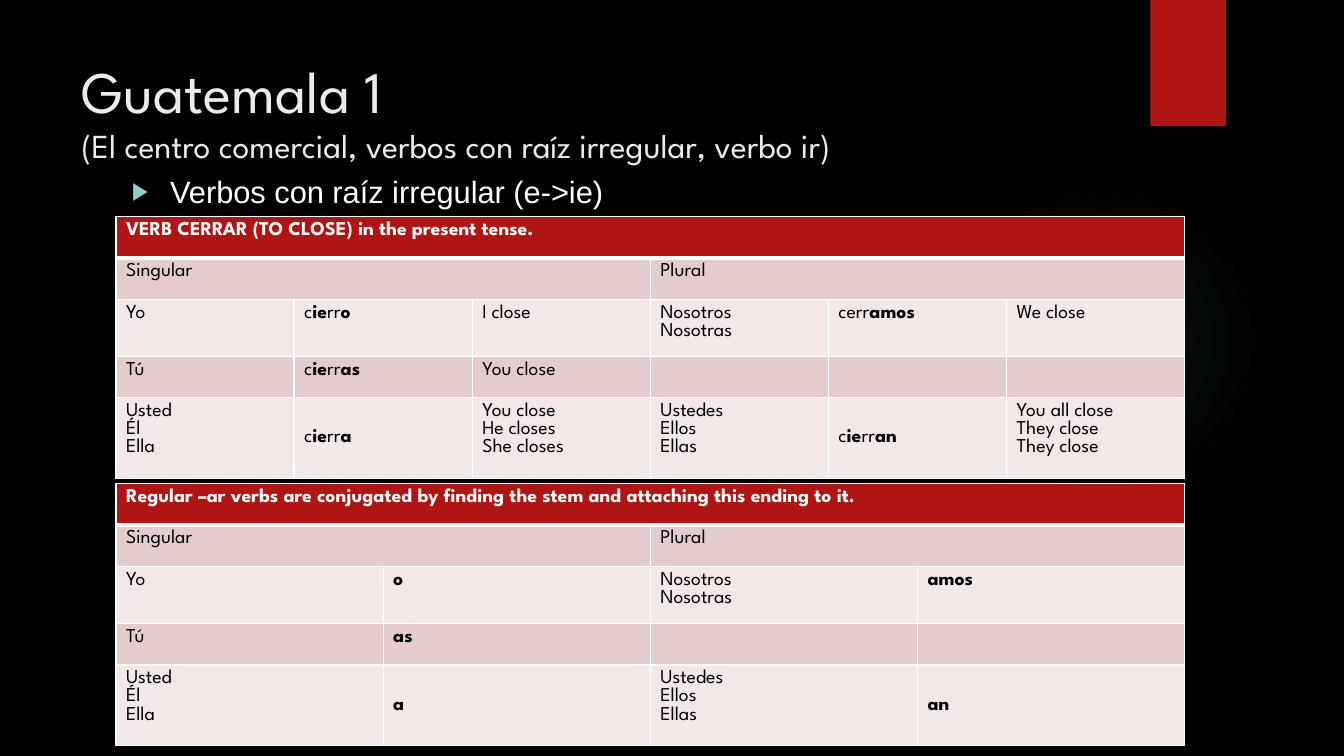
from dataclasses import dataclass

from lxml.etree import SubElement
from pptx import Presentation
from pptx.dml.color import RGBColor
from pptx.enum.shapes import MSO_SHAPE as Preset
from pptx.enum.text import MSO_ANCHOR as Anchor
from pptx.oxml import parse_xml
from pptx.oxml.ns import nsdecls, qn
from pptx.util import Inches, Pt


@dataclass(frozen=True)
class Theme:
    """Colours, fonts and type sizes of the slide."""
    background: str = "000000"
    accent: str = "B01513"
    glow: str = "50B9C1"
    title: str = "EBEBEB"
    white: str = "FFFFFF"
    ink: str = "000000"
    bullet: str = "8AD0D6"
    bands: tuple = ("E4CCCC", "F2E8E7")
    display_font: str = "League Spartan"
    body_font: str = "Arial"
    title_size: int = 42
    subtitle_size: int = 24
    topic_size: int = 22
    cell_size: int = 14


THEME = Theme()
ROW_HEIGHTS = (0.41, 0.41, 0.46, 0.41, 0.63)
CERRAR = [
    ["VERB CERRAR (TO CLOSE) in the present tense."],
    ["Singular", "Plural"],
    ["Yo", "c*ie*rr*o*", "I close", "Nosotros\nNosotras", "cerr*amos*", "We close"],
    ["Tú", "c*ie*rr*as*", "You close", "", "", ""],
    ["Usted\nÉl\nElla", "c*ie*rr*a*", "You close\nHe closes\nShe closes",
     "Ustedes\nEllos\nEllas", "c*ie*rr*an*", "You all close\nThey close\nThey close"],
]
AR_ENDINGS = [
    ["Regular –ar verbs are conjugated by finding the stem and attaching this ending to it."],
    ["Singular", "Plural"],
    ["Yo", "*o*", "Nosotros\nNosotras", "*amos*"],
    ["Tú", "*as*", "", ""],
    ["Usted\nÉl\nElla", "*a*", "Ustedes\nEllos\nEllas", "*an*"],
]


def write(paragraph, text, *, size, color, font=THEME.display_font, bold=False):
    """Fill a paragraph; parts between asterisks are bold."""
    for index, part in enumerate(text.split("*")):
        if part:
            run = paragraph.add_run()
            run.text = part
            run.font.size = Pt(size)
            run.font.name = font
            run.font.bold = bold or index % 2 == 1
            run.font.color.rgb = RGBColor.from_string(color)
    ending = SubElement(paragraph._p, qn("a:endParaRPr"), sz=str(size * 100))
    SubElement(ending, qn("a:latin"), typeface=font)


def add_frame(slide, box, top_inset):
    """Add a wrapping text box and return its text frame."""
    frame = slide.shapes.add_textbox(*map(Inches, box)).text_frame
    frame.word_wrap = True
    frame.vertical_anchor = Anchor.TOP
    frame.margin_top = Inches(top_inset)
    return frame


def add_plain_shape(slide, preset, box):
    """Add a preset shape without line or shadow."""
    shape = slide.shapes.add_shape(preset, *map(Inches, box))
    shape.shadow.inherit = False
    shape.line.fill.background()
    return shape


def add_backdrop(slide, glow_box, ribbon_box):
    """Draw the black background, the faint glow and the red ribbon."""
    slide.background.fill.solid()
    slide.background.fill.fore_color.rgb = RGBColor.from_string(THEME.background)
    glow = add_plain_shape(slide, Preset.OVAL, glow_box)
    stops = "".join(
        f'<a:gs pos="{position * 1000}"><a:srgbClr val="{THEME.glow}">'
        f'<a:alpha val="{alpha * 1000}"/></a:srgbClr></a:gs>'
        for position, alpha in ((0, 7), (36, 6), (69, 0), (100, 0)))
    gradient = parse_xml(
        f'<a:gradFill {nsdecls("a")} rotWithShape="1"><a:gsLst>{stops}</a:gsLst>'
        '<a:path path="circle"><a:fillToRect l="50000" t="50000" r="50000" b="50000"/>'
        '</a:path></a:gradFill>')
    glow.element.spPr.find(qn("a:prstGeom")).addnext(gradient)
    ribbon = add_plain_shape(slide, Preset.RECTANGLE, ribbon_box)
    ribbon.fill.solid()
    ribbon.fill.fore_color.rgb = RGBColor.from_string(THEME.accent)


def add_heading(slide, box):
    """Write the unit title and its list of subjects."""
    frame = add_frame(slide, box, 0.04)
    write(frame.paragraphs[0], "Guatemala 1", size=THEME.title_size, color=THEME.title)
    write(frame.add_paragraph(), "(El centro comercial, verbos con raíz irregular, verbo ir)",
          size=THEME.subtitle_size, color=THEME.title)


def add_topic(slide, box):
    """Write the bulleted topic line."""
    topic = add_frame(slide, box, 0.05).paragraphs[0]
    properties = topic._p.get_or_add_pPr()
    properties.set("marL", str(Inches(0.38)))
    properties.set("indent", str(-Inches(0.38)))
    color = SubElement(properties, qn("a:buClr"))
    SubElement(color, qn("a:srgbClr"), val=THEME.bullet)
    SubElement(properties, qn("a:buSzPct"), val="80000")
    SubElement(properties, qn("a:buFont"), typeface=THEME.body_font)
    SubElement(properties, qn("a:buChar"), char="▶")
    write(topic, "Verbos con raíz irregular (e->ie)", size=THEME.topic_size,
          color=THEME.white, font=THEME.body_font)


def style_cell(cell, fill, top, bottom):
    """Give a cell white borders and a plain fill."""
    properties = cell._tc.get_or_add_tcPr()
    for side, width in (("lnL", 1), ("lnR", 1), ("lnT", top), ("lnB", bottom)):
        border = SubElement(properties, qn(f"a:{side}"), w=str(Pt(width)))
        paint = SubElement(border, qn("a:solidFill"))
        SubElement(paint, qn("a:srgbClr"), val=THEME.white)
    cell.fill.solid()
    cell.fill.fore_color.rgb = RGBColor.from_string(fill)


def add_conjugation(slide, box, rows):
    """Build a verb table whose short rows are merged evenly across it."""
    columns = len(rows[-1])
    table = slide.shapes.add_table(len(rows), columns, *map(Inches, box)).table
    for column in table.columns:
        column.width = Inches(box[2] / columns)
    for r, entries in enumerate(rows):
        table.rows[r].height = Inches(ROW_HEIGHTS[r])
        header = r == 0
        fill = THEME.accent if header else THEME.bands[(r - 1) % 2]
        for c in range(columns):
            style_cell(table.cell(r, c), fill, 3 if r == 1 else 1, 3 if header else 1)
        span = columns // len(entries)
        for index, entry in enumerate(entries):
            cell = table.cell(r, index * span)
            if span > 1:
                cell.merge(table.cell(r, (index + 1) * span - 1))
            lines = entry.split("\n")
            centred = r == len(rows) - 1 and len(lines) == 1
            cell.vertical_anchor = Anchor.MIDDLE if centred else Anchor.TOP
            for n, line in enumerate(lines):
                paragraph = cell.text_frame.add_paragraph() if n else cell.text_frame.paragraphs[0]
                write(paragraph, line, size=THEME.cell_size, bold=header,
                      color=THEME.white if header else THEME.ink)


def main():
    """Build the slide and save it."""
    deck = Presentation()
    deck.slide_width, deck.slide_height = Inches(13.33), Inches(7.5)
    slide = deck.slides.add_slide(deck.slide_layouts[6])
    add_backdrop(slide, (9.41, 1.83, 3.08, 3.08), (11.41, 0, 0.75, 1.25))
    add_heading(slide, (0.71, 0.5, 10.29, 1.53))
    add_topic(slide, (1.21, 1.66, 9.78, 0.5))
    for top, rows in ((2.15, CERRAR), (4.8, AR_ENDINGS)):
        add_conjugation(slide, (1.15, top, 10.6, sum(ROW_HEIGHTS)), rows)
    deck.save("out.pptx")


if __name__ == "__main__":
    main()
